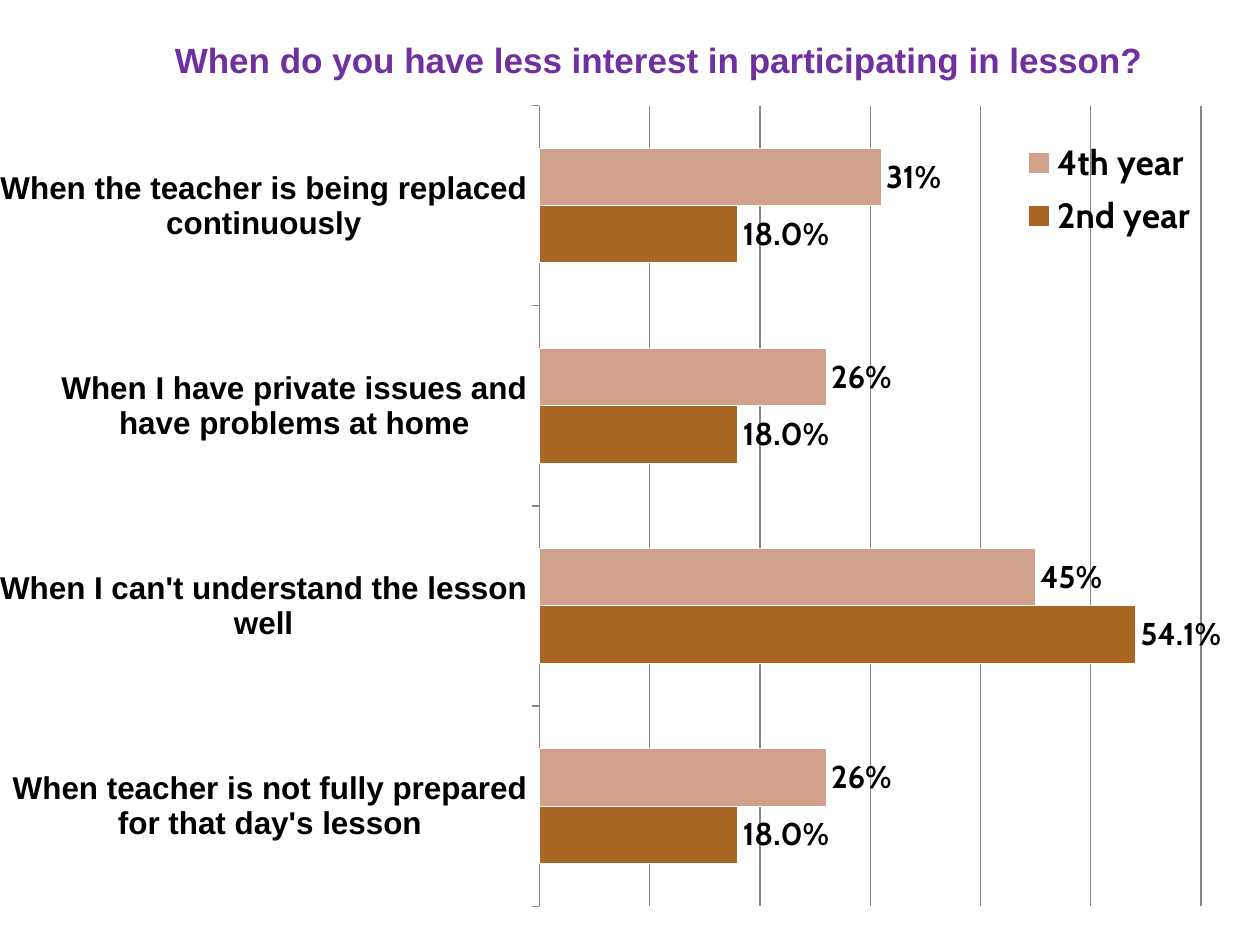
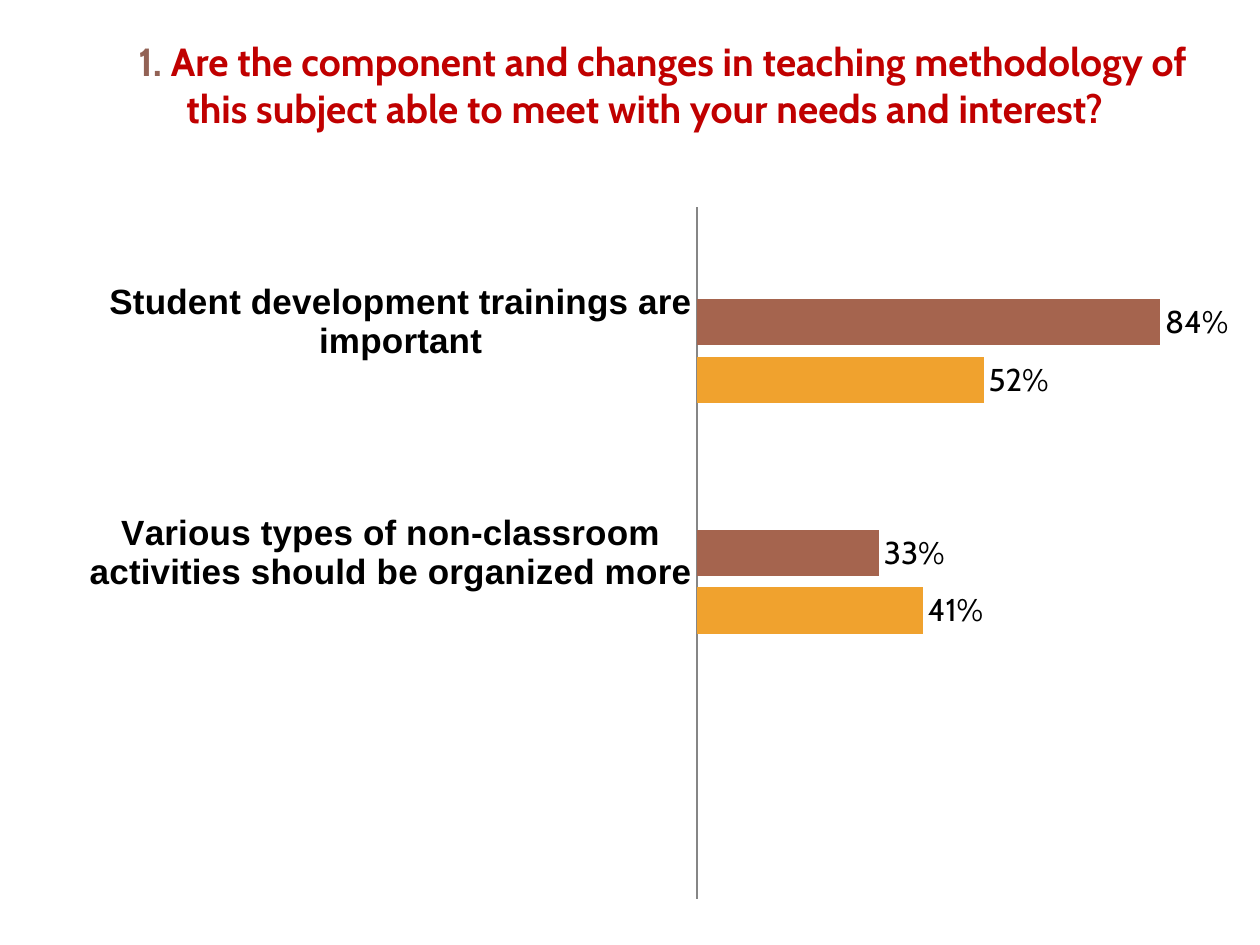
"""Build two survey slides, each a title over a clustered bar chart."""
from lxml import etree
from pptx import Presentation
from pptx.chart.data import CategoryChartData
from pptx.dml.color import RGBColor
from pptx.enum.chart import (XL_CHART_TYPE, XL_LABEL_POSITION, XL_LEGEND_POSITION,
                             XL_TICK_LABEL_POSITION, XL_TICK_MARK)
from pptx.enum.text import MSO_ANCHOR
from pptx.oxml.ns import qn
from pptx.util import Pt

BAR = XL_CHART_TYPE.BAR_CLUSTERED
OUTSIDE = XL_LABEL_POSITION.OUTSIDE_END
RIGHT = XL_LEGEND_POSITION.RIGHT
NO_LABELS = XL_TICK_LABEL_POSITION.NONE
TICK_NONE, TICK_OUT = XL_TICK_MARK.NONE, XL_TICK_MARK.OUTSIDE
TOP, MIDDLE = MSO_ANCHOR.TOP, MSO_ANCHOR.MIDDLE

BLACK = RGBColor(0, 0, 0)
WHITE = RGBColor(0xFF, 0xFF, 0xFF)
GREY = RGBColor(0x86, 0x86, 0x86)
PURPLE = RGBColor(0x70, 0x30, 0xA0)
RED = RGBColor(0xC0, 0, 0)
TAUPE = RGBColor(0x92, 0x62, 0x55)
BRONZE = RGBColor(0xAA, 0x67, 0x23)
SAND = RGBColor(0xD0, 0xA2, 0x8A)
AMBER = RGBColor(0xF0, 0xA2, 0x2E)
BROWN = RGBColor(0xA5, 0x64, 0x4E)
ROSE = RGBColor(0xB5, 0x8B, 0x80)
HEAD, BODY = "Arial", "Cabin"

SLIDES = [
    dict(
        title=[("When do you have less interest in participating in lesson?", PURPLE)],
        title_box=(92.8, 18, 570, 32), title_font=(HEAD, 20), anchor=MIDDLE, hang=0,
        box=(0, 60, 720, 480), plot=(0.426, 0, 0.527, 0.954),
        cats=["When teacher is not fully prepared for that day's lesson",
              "When I can't understand the lesson well",
              "When I have private issues and have problems at home",
              "When the teacher is being replaced continuously"],
        series=[("2nd year", (0.18, 0.541, 0.18, 0.18), BRONZE, "0.0%"),
                ("4th year", (0.26, 0.45, 0.26, 0.31), SAND, "0%")],
        cat_size=18, bold=True, overlap=0, top=0.6, step=0.1, grid=True,
        edge=WHITE, tick=TICK_OUT, legend=(0.8, 0.03, 0.16, 0.14)),
    dict(
        title=[("1. ", TAUPE),
               ("Are the component and changes in teaching methodology of this "
                "subject able to meet with your needs and interest?", RED)],
        title_box=(72, 18, 648, 60), title_font=(BODY, 22.4), anchor=TOP, hang=27.4,
        box=(42, 110, 660, 412), plot=(0.54, 0.02, 0.43, 0.96),
        cats=["", "Various types of non-classroom activities should be organized more",
              "Student development trainings are important"],
        series=[("Series 1", (None, 0.41, 0.52), AMBER, "0%"),
                ("Series 2", (None, 0.33, 0.84), BROWN, "0%"),
                ("Series 3", (None, None, None), ROSE, "0%")],
        cat_size=20, bold=False, overlap=-25, top=0.9, step=0.1, grid=False,
        edge=None, tick=TICK_NONE, legend=None),
]


def style(font, name, size, bold, color=BLACK):
    font.name, font.size, font.bold = name, Pt(size), bold
    font.color.rgb = color


def place(parent, after, frame, inner=False):
    """Give a chart part a manual layout, as fractions of the chart."""
    for old in parent.findall(qn("c:layout")):
        parent.remove(old)
    layout = etree.Element(qn("c:layout"))
    manual = etree.SubElement(layout, qn("c:manualLayout"))
    values = [("layoutTarget", "inner")] if inner else []
    values += [("xMode", "edge"), ("yMode", "edge"), *zip("xywh", frame)]
    for tag, value in values:
        etree.SubElement(manual, qn("c:" + tag)).set("val", str(value))
    if after is None:
        parent.insert(0, layout)
    else:
        after.addnext(layout)


def add_title(s, d):
    tf = s.shapes.add_textbox(*map(Pt, d["title_box"])).text_frame
    tf.word_wrap, tf.vertical_anchor = True, d["anchor"]
    p = tf.paragraphs[0]
    if d["hang"]:
        pPr = p._p.get_or_add_pPr()
        pPr.set("marL", str(Pt(d["hang"])))
        pPr.set("indent", str(-Pt(d["hang"])))
    for text, color in d["title"]:
        r = p.add_run()
        r.text = text
        style(r.font, *d["title_font"], True, color)


def add_bars(s, d):
    data = CategoryChartData()
    data.categories = d["cats"]
    for name, values, _, fmt in d["series"]:
        data.add_series(name, values, fmt)
    chart = s.shapes.add_chart(BAR, *map(Pt, d["box"]), data).chart
    chart.has_title = False
    style(chart.font, BODY, 18, False)
    plot = chart.plots[0]
    plot.gap_width, plot.overlap, plot.vary_by_categories = 150, d["overlap"], False
    for ser, (_, _, color, fmt) in zip(plot.series, d["series"]):
        ser.format.fill.solid()
        ser.format.fill.fore_color.rgb = color
        if d["edge"] is not None:
            ser.format.line.color.rgb = d["edge"]
        labels = ser.data_labels
        labels.show_value, labels.position = True, OUTSIDE
        labels.number_format, labels.number_format_is_linked = fmt, False
        style(labels.font, BODY, 18, d["bold"])

    cat, val = chart.category_axis, chart.value_axis
    cat.major_tick_mark = d["tick"]
    cat.format.line.color.rgb = GREY
    style(cat.tick_labels.font, HEAD, d["cat_size"], True)
    val.minimum_scale, val.maximum_scale, val.major_unit = 0, d["top"], d["step"]
    val.tick_label_position, val.major_tick_mark = NO_LABELS, TICK_NONE
    val.format.line.fill.background()
    val.has_major_gridlines = d["grid"]
    if d["grid"]:
        val.major_gridlines.format.line.color.rgb = GREY

    area = chart._chartSpace.find(".//" + qn("c:plotArea"))
    place(area, None, d["plot"], inner=True)
    chart.has_legend = d["legend"] is not None
    if chart.has_legend:
        legend = chart.legend
        legend.position, legend.include_in_layout = RIGHT, False
        style(legend.font, BODY, 20, True)
        node = chart._chartSpace.find(".//" + qn("c:legend"))
        place(node, node.find(qn("c:legendPos")), d["legend"])


def main():
    prs = Presentation()
    prs.slide_width, prs.slide_height = Pt(720), Pt(540)
    for d in SLIDES:
        s = prs.slides.add_slide(prs.slide_layouts[6])
        add_bars(s, d)
        add_title(s, d)
    prs.save("out.pptx")


if __name__ == "__main__":
    main()
